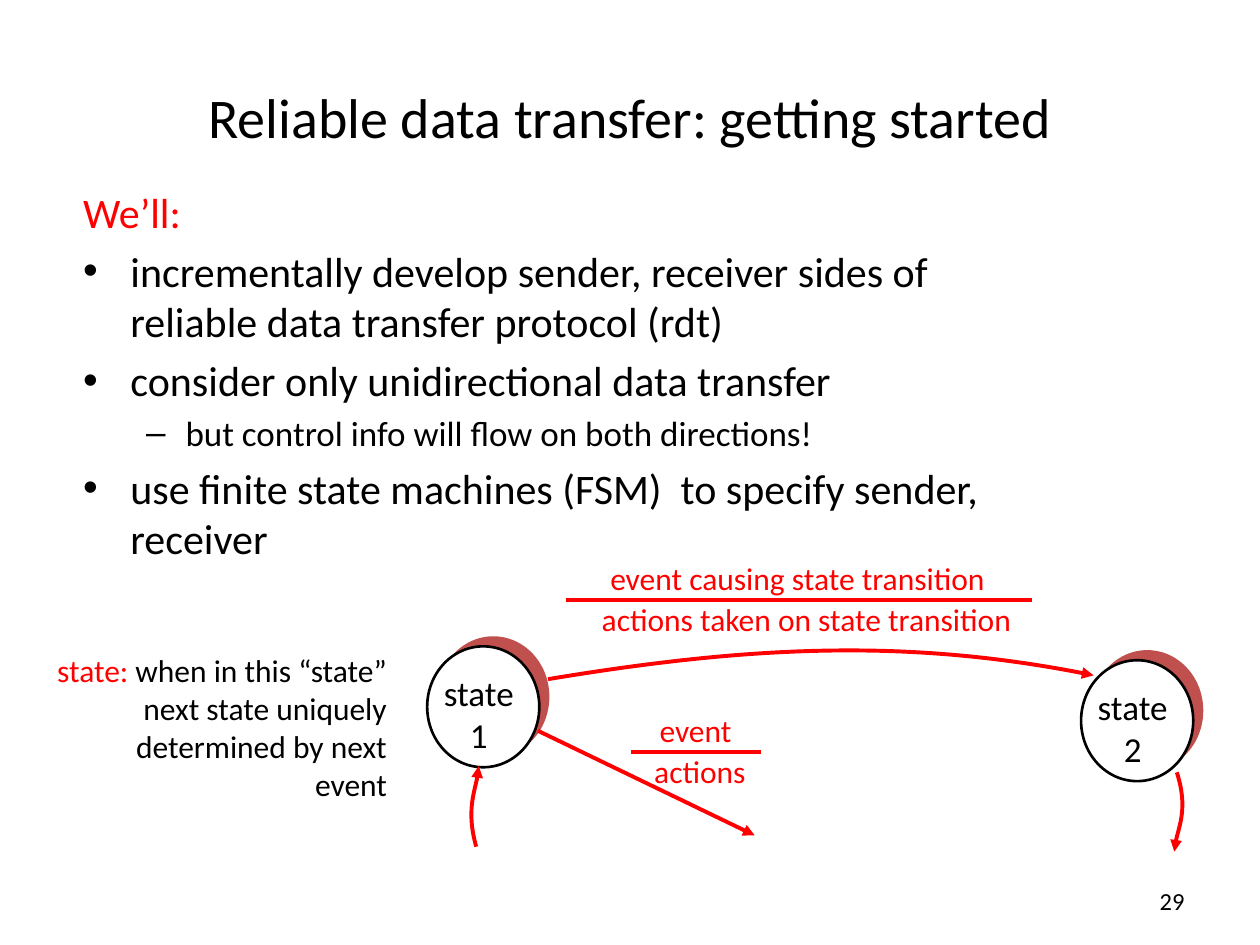
from dataclasses import dataclass

from lxml import etree
from pptx import Presentation
from pptx import util as u
from pptx.dml.color import RGBColor
from pptx.enum import shapes, text
from pptx.oxml.ns import qn

FONT = "Calibri"
BLACK, WHITE, RED, BRICK = "000000", "FFFFFF", "FF0000", "C0504D"
LEFT, CENTER, RIGHT = text.PP_ALIGN.LEFT, text.PP_ALIGN.CENTER, text.PP_ALIGN.RIGHT


@dataclass
class State:
    label: str
    x: float
    y: float


@dataclass
class Label:
    text: str
    x: float
    y: float
    w: float


@dataclass
class Fraction:
    """An event above a rule, with its actions below."""
    event: Label
    actions: Label
    rule: tuple[float, float, float]  # left, right, y


def rgb(color: str) -> RGBColor:
    return RGBColor.from_string(color)


def place(sp, x: float, y: float, w: float, h: float) -> None:
    sp.left, sp.top, sp.width, sp.height = map(u.Inches, (x, y, w, h))


def add_run(p, words: str, *, size: float, color: str = BLACK) -> None:
    r = p.add_run()
    r.text = words
    r.font.name, r.font.size = FONT, u.Pt(size)
    r.font.color.rgb = rgb(color)


def add_text(parent, lines, box, *, size=18, color=BLACK, align=CENTER,
             wrap=False, anchor=text.MSO_ANCHOR.TOP):
    sp = parent.add_textbox(*map(u.Inches, box))
    tf = sp.text_frame
    tf.word_wrap, tf.vertical_anchor = wrap, anchor
    if not wrap:
        tf.auto_size = text.MSO_AUTO_SIZE.SHAPE_TO_FIT_TEXT
    for i, line in enumerate(lines):
        p = tf.add_paragraph() if i else tf.paragraphs[0]
        p.alignment = align
        add_run(p, line, size=size, color=color)
    return sp


def style_stroke(sp, arrow: bool) -> None:
    sp.line.color.rgb, sp.line.width = rgb(RED), u.Pt(2.25)
    if arrow:
        etree.SubElement(sp.line._get_or_add_ln(), qn("a:tailEnd"), type="triangle")


def add_line(parent, start, end, *, arrow=False) -> None:
    sp = parent.add_connector(shapes.MSO_CONNECTOR.STRAIGHT,
                              *map(u.Inches, (*start, *end)))
    style_stroke(sp, arrow)
    etree.SubElement(sp._element.spPr, qn("a:effectLst"))


def add_curve(parent, start, *points) -> None:
    """Draw an arrow along one cubic Bezier: two control points and an end."""
    builder = parent.build_freeform(*map(u.Inches, start))
    builder.add_line_segments([tuple(map(u.Inches, pt)) for pt in points], close=False)
    sp = builder.convert_to_shape()
    sp.shadow.inherit = False
    sp.fill.background()
    style_stroke(sp, True)
    # Merge the three segments into one curve
    path = sp._element.find(".//" + qn("a:path"))
    curve = etree.SubElement(path, qn("a:cubicBezTo"))
    for segment in path.findall(qn("a:lnTo")):
        curve.append(segment[0])
        path.remove(segment)


def add_oval(parent, x: float, y: float, fill: str, outline: bool) -> None:
    sp = parent.add_shape(shapes.MSO_SHAPE.OVAL, *map(u.Inches, (x, y, 0.89, 0.96)))
    sp.shadow.inherit = False
    sp.fill.solid()
    sp.fill.fore_color.rgb = rgb(fill)
    if outline:
        sp.line.color.rgb, sp.line.width = rgb(BLACK), u.Pt(1.5)
    else:
        sp.line.fill.background()


def add_state(parent, state: State) -> None:
    group = parent.add_group_shape().shapes
    add_oval(group, state.x + 0.08, state.y - 0.08, BRICK, False)
    add_oval(group, state.x, state.y, WHITE, True)
    add_text(group, ["state", state.label],
             (state.x + 0.03, state.y + 0.15, 0.76, 0.77), size=20)


def add_fraction(parent, fraction: Fraction) -> None:
    for label in (fraction.event, fraction.actions):
        add_text(parent, [label.text], (label.x, label.y, label.w, 0.4), color=RED)
    left, right, y = fraction.rule
    add_line(parent, (left, y), (right, y))


BODY = [  # text, level, size, colour
    ("We’ll:", 0, 24, RED),
    ("incrementally develop sender, receiver sides of reliable data transfer "
     "protocol (rdt)", 0, 24, BLACK),
    ("consider only unidirectional data transfer", 0, 24, BLACK),
    ("but control info will flow on both directions!", 1, 20, BLACK),
    ("use finite state machines (FSM)  to specify sender, receiver", 0, 24, BLACK),
]
STATES = [State("1", 3.39, 5.13), State("2", 8.58, 5.24)]
TRANSITION = Fraction(Label("event causing state transition", 4.73, 4.39, 3.2),
                      Label("actions taken on state transition", 4.66, 4.71, 3.48),
                      (4.49, 8.19, 4.76))
BRANCH = Fraction(Label("event", 5.13, 5.59, 0.78),
                  Label("actions", 5.09, 5.92, 0.93),
                  (5.01, 6.04, 5.97))
CURVES = [
    ((4.35, 5.39), (5.97, 5.12), (7.26, 5.07), (8.68, 5.36)),
    ((3.78, 6.72), (3.7, 6.44), (3.8, 6.18), (3.8, 6.08)),
    ((9.34, 6.13), (9.43, 6.41), (9.32, 6.66), (9.32, 6.76)),
]


def main() -> None:
    prs = Presentation()
    prs.slide_width, prs.slide_height = u.Inches(10), u.Inches(7.5)
    s = prs.slides.add_slide(prs.slide_layouts[1])
    title, body = s.placeholders

    # Title and list
    place(title, 0.5, 0.3, 9, 1.25)
    add_run(title.text_frame.paragraphs[0],
            "Reliable data transfer: getting started", size=32)
    place(body, 0.56, 1.43, 7.94, 3.67)
    tf = body.text_frame
    tf.auto_size = text.MSO_AUTO_SIZE.NONE
    for i, (words, level, size, color) in enumerate(BODY):
        p = tf.add_paragraph() if i else tf.paragraphs[0]
        p.level = level
        add_run(p, words, size=size, color=color)
    etree.SubElement(tf.paragraphs[0]._p.get_or_add_pPr(), qn("a:buNone"))

    # State machine
    for state in STATES:
        add_state(s.shapes, state)
    for curve in CURVES:
        add_curve(s.shapes, *curve)
    add_line(s.shapes, (4.27, 5.8), (5.99, 6.63), arrow=True)
    add_fraction(s.shapes, TRANSITION)
    add_fraction(s.shapes.add_group_shape().shapes, BRANCH)

    # Explanation of a state
    note = add_text(s.shapes, ["state:"], (0.14, 5.12, 3.03, 1.35),
                    color=RED, align=RIGHT, wrap=True)
    p = note.text_frame.paragraphs[0]
    p.space_before = u.Pt(3.6)
    add_run(p, " when in this “state” next state uniquely determined by next event",
            size=18)
    pPr = p._p.get_or_add_pPr()
    pPr.set("marL", str(u.Inches(0.38)))
    pPr.set("indent", str(u.Inches(-0.38)))

    # Page number
    add_text(s.shapes, ["29"], (7.17, 6.95, 2.33, 0.4), size=14, align=RIGHT,
             wrap=True, anchor=text.MSO_ANCHOR.MIDDLE)

    prs.save("out.pptx")


if __name__ == "__main__":
    main()
